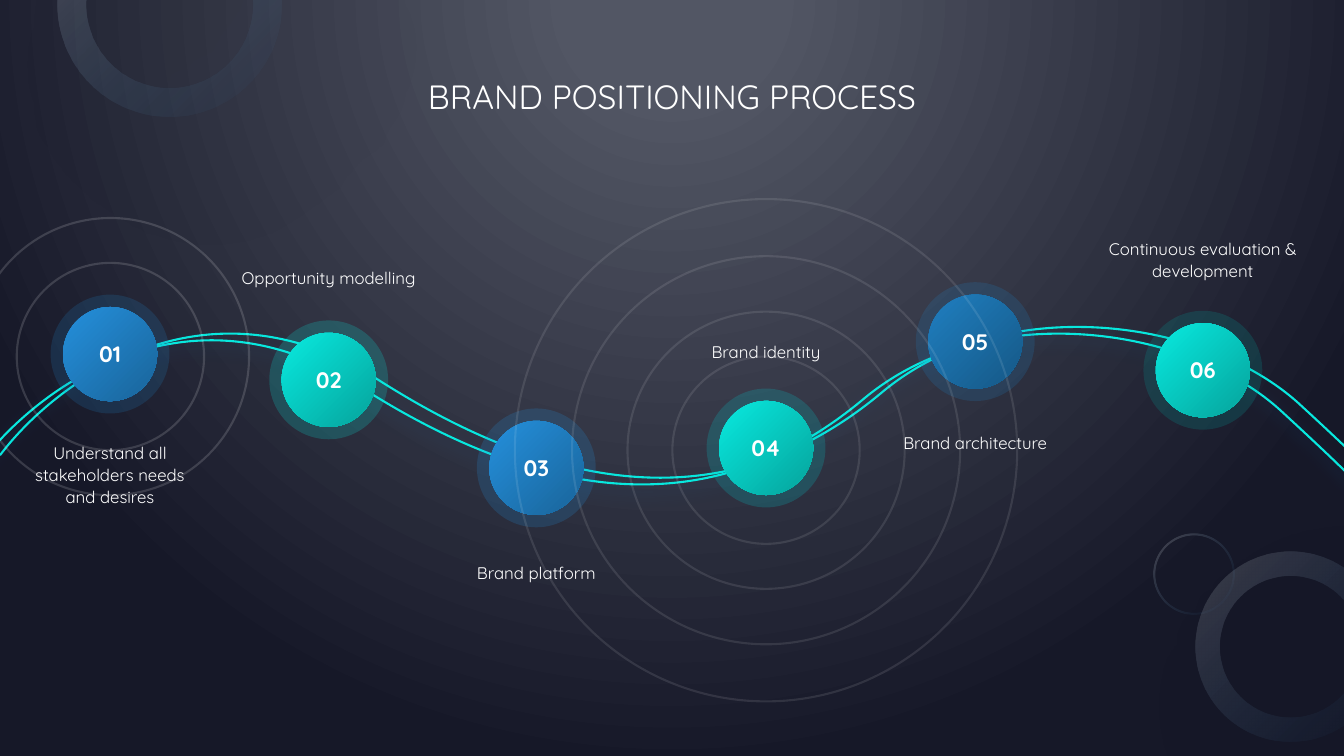
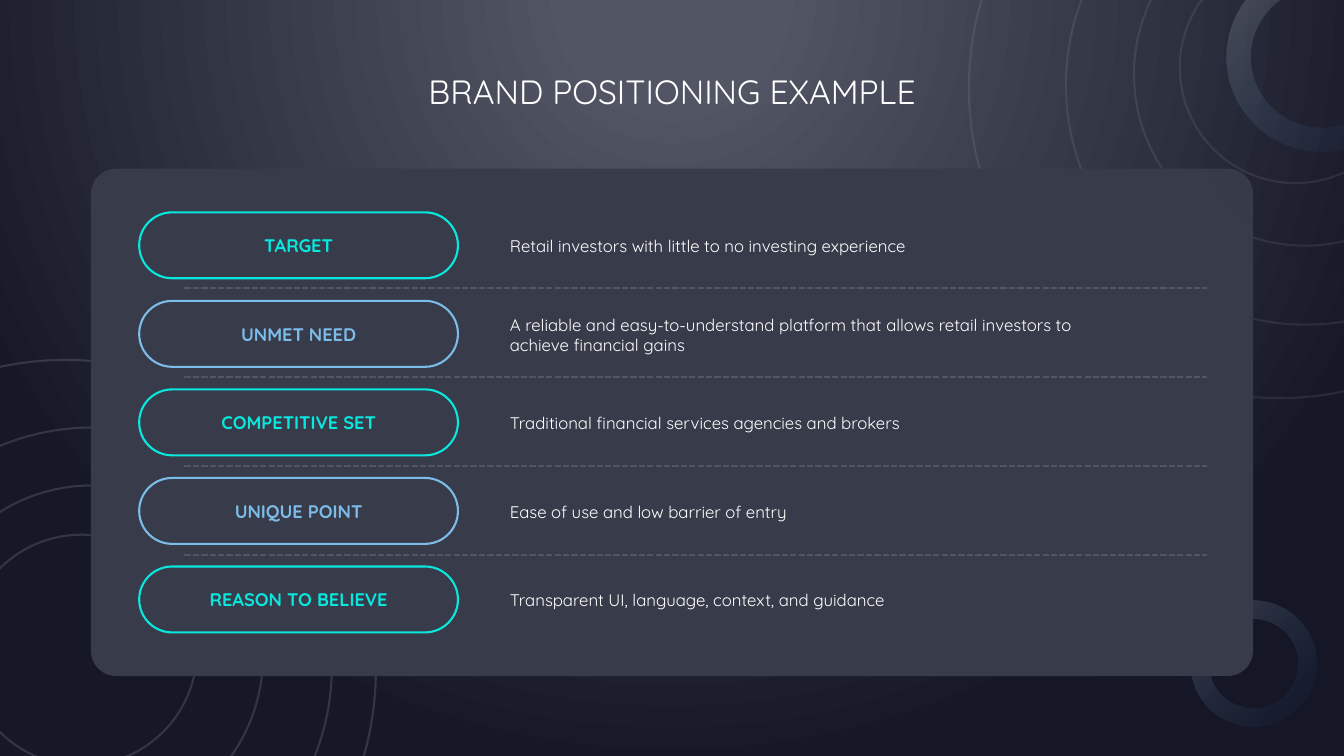
import typing
from dataclasses import dataclass

import pptx
import pptx.dml.color
import pptx.enum.dml
import pptx.enum.shapes
import pptx.enum.text
import pptx.oxml
import pptx.oxml.ns
import pptx.util

SHAPES = pptx.enum.shapes.MSO_SHAPE
ALIGN = pptx.enum.text.PP_ALIGN
ANCHOR = pptx.enum.text.MSO_ANCHOR
qn = pptx.oxml.ns.qn

# The slide is a grid of square cells
COLUMNS, ROWS = 160, 90
CELL = pptx.util.Inches(7.5) // ROWS

FONT = "Quicksand"
WHITE, TEAL, BLUE, SKY = "FFFFFF", "08E8DE", "248FDB", "7CBCE9"
DEEP_BLUE, PANEL, GREY, NAVY = "1F7EBF", "383B4A", "525664", "161828"
TEAL_DISC, BLUE_DISC = (TEAL, "06AEA6"), (BLUE, "1B6BA4")
LINE_WIDTH = pptx.util.Pt(1.5)
HALO, DISC = 14.15, 11.2


class Stop(typing.NamedTuple):
    position: int
    colour: str
    alpha: int = 100


class Shadow(typing.NamedTuple):
    colour: str
    alpha: int
    blur: int
    distance: int
    angle: int


RING_SHADOW = Shadow("3553D3", 5, 52, 4, 90)
DONUT_SHADOW = Shadow("000000", 40, 100, 65, 45)
WAVE_SHADOW = Shadow(BLUE, 25, 11, 4, 90)


@dataclass
class Step:
    number: str
    caption: str
    x: float
    y: float
    caption_top: float
    caption_width: float
    halo: str
    disc: tuple[str, str]


@dataclass
class Circle:
    x: float
    y: float
    size: float
    alpha: int
    hole: float = 0


class Statement(typing.NamedTuple):
    label: str
    detail: str


STEPS = [
    Step("01", "Understand all stakeholders needs and desires", 13.1, 42.15, 52.5, 20, DEEP_BLUE, BLUE_DISC),
    Step("02", "Opportunity modelling", 39.13, 45.22, 31.7, 22, TEAL, TEAL_DISC),
    Step("03", "Brand platform", 63.85, 55.7, 66.8, 20, BLUE, BLUE_DISC),
    Step("04", "Brand identity", 91.2, 53.33, 40.5, 20, "00CED1", TEAL_DISC),
    Step("05", "Brand architecture", 116.1, 40.67, 51.3, 20, DEEP_BLUE, (DEEP_BLUE, "175E8F")),
    Step("06", "Continuous evaluation & development", 143.2, 44.07, 28.2, 23.8, "00A29C", TEAL_DISC),
]
STATEMENTS = [
    Statement("TARGET", "Retail investors with little to no investing experience"),
    Statement("UNMET NEED", "A reliable and easy-to-understand platform that allows "
              "retail investors to achieve financial gains"),
    Statement("COMPETITIVE SET", "Traditional financial services agencies and brokers"),
    Statement("UNIQUE POINT", "Ease of use and low barrier of entry"),
    Statement("REASON TO BELIEVE", "Transparent UI, language, context, and guidance"),
]
PROCESS_RINGS = [Circle(91.2, 53.6, size, 9) for size in (59.8, 46.2, 33, 22.3)]
PROCESS_RINGS += [Circle(13.15, 42.45, size, 14) for size in (33, 22.3)]
RIPPLE = [(0, 0, 73.9), (3.15, -0.35, 57.1), (3.1, -1.6, 40.8), (1.9, -2.4, 27.5)]
EXAMPLE_RINGS = [
    Circle(x + shift_x, y + shift_y, size, alpha)
    for x, y, alpha in ((152.3, 10.45, 8), (7.8, 79.8, 13))
    for shift_x, shift_y, size in RIPPLE
]
PROCESS_DONUTS = [
    Circle(142.15, 68.35, 9.7, 22, 0.03),
    Circle(153.6, 76.95, 22.6, 19, 0.13),
    Circle(20.2, 0.55, 26.6, 22, 0.13),
]
LOWER_DONUT = Circle(149.2, 79, 15, 20, 0.15)
UPPER_DONUT = Circle(157.3, 6.8, 22.6, 20, 0.13)

# Start, then two control points and an end for each curve
WAVE = [
    (0, 54.2), (6.4, 45.7), (24.2, 32), (45, 45.2),
    (71, 61.8), (90, 59.2), (104.9, 46.8),
    (119.6, 34.4), (143.8, 38), (154.8, 48.2),
    (163.7, 56.4), (165, 58), (164.5, 57.7),
]
WAVE_TOP, WAVE_WIDTH, WAVE_HEIGHT = 39, 164.5, 18.7


def cells(*values: float) -> list[int]:
    return [round(value * CELL) for value in values]


def apply(target: typing.Any, formats: dict[str, typing.Any]) -> None:
    for name, value in formats.items():
        setattr(target, name, value)


def paint(fill: typing.Any, colour: str) -> None:
    fill.solid()
    fill.fore_color.rgb = pptx.dml.color.RGBColor.from_string(colour)


def fade(shape: typing.Any, route: str, alpha: int) -> None:
    """Set the opacity, in percent, of the solid fill under the given element."""
    tags = [qn(tag) for tag in (route + "a:solidFill a:srgbClr").split()]
    colour = shape.element.spPr.find("/".join(tags))
    colour.append(colour.makeelement(qn("a:alpha"), {"val": str(alpha * 1000)}))


def blend(parent: typing.Any, stops: list[Stop], direction: str) -> None:
    """Turn the solid fill of a properties element into a gradient."""
    marks = "".join(
        f'<a:gs pos="{stop.position * 1000}"><a:srgbClr val="{stop.colour}">'
        f'<a:alpha val="{stop.alpha * 1000}"/></a:srgbClr></a:gs>' for stop in stops)
    gradient = pptx.oxml.parse_xml(
        f'<a:gradFill {pptx.oxml.ns.nsdecls("a")} rotWithShape="1">'
        f"<a:gsLst>{marks}</a:gsLst>{direction}</a:gradFill>")
    parent.replace(parent.find(qn("a:solidFill")), gradient)


DIAGONAL = '<a:lin ang="2700000" scaled="0"/>'
GLOW = '<a:path path="circle"><a:fillToRect l="50000" t="-80000" r="50000" b="180000"/></a:path>'


def cast(shape: typing.Any, shadow: Shadow) -> None:
    shape.shadow.inherit = False
    shape.element.spPr.find(qn("a:effectLst")).append(pptx.oxml.parse_xml(
        f'<a:outerShdw {pptx.oxml.ns.nsdecls("a")} blurRad="{pptx.util.Pt(shadow.blur)}" '
        f'dist="{pptx.util.Pt(shadow.distance)}" dir="{shadow.angle * 60000}" rotWithShape="0">'
        f'<a:srgbClr val="{shadow.colour}"><a:alpha val="{shadow.alpha * 1000}"/>'
        "</a:srgbClr></a:outerShdw>"))


def write(box: typing.Any, text: str, size: float, colour: str = WHITE, bold: bool = False,
          align: typing.Any = ALIGN.CENTER, anchor: typing.Any = ANCHOR.MIDDLE,
          leading: float | None = None) -> None:
    frame = box.text_frame
    apply(frame, {"word_wrap": True, "auto_size": pptx.enum.text.MSO_AUTO_SIZE.NONE,
                  "vertical_anchor": anchor, "margin_left": 0, "margin_right": 0,
                  "margin_top": 0, "margin_bottom": 0})
    para = frame.paragraphs[0]
    apply(para, {"alignment": align, "line_spacing": pptx.util.Pt(leading) if leading else None})
    span = para.add_run()
    span.text = text
    apply(span.font, {"name": FONT, "size": pptx.util.Pt(size), "bold": bold})
    paint(span.font.fill, colour)


def add_shape(page: typing.Any, kind: typing.Any, left: float, top: float, width: float,
              height: float, fill: str | None = None, line: str | None = None) -> typing.Any:
    shape = page.shapes.add_shape(kind, *cells(left, top, width, height))
    shape.shadow.inherit = False
    for target, colour in ((shape.fill, fill), (shape.line.fill, line)):
        if colour:
            paint(target, colour)
        else:
            target.background()
    if line:
        shape.line.width = LINE_WIDTH
    return shape


def add_round(page: typing.Any, kind: typing.Any, x: float, y: float, size: float,
              **colours: str) -> typing.Any:
    """Add a shape as wide as it is high, centred on x and y."""
    return add_shape(page, kind, x - size / 2, y - size / 2, size, size, **colours)


def add_ring(page: typing.Any, ring: Circle) -> None:
    shape = add_round(page, SHAPES.OVAL, ring.x, ring.y, ring.size, line=WHITE)
    fade(shape, "a:ln ", ring.alpha)
    cast(shape, RING_SHADOW)


def add_donut(page: typing.Any, donut: Circle) -> None:
    shape = add_round(page, SHAPES.DONUT, donut.x, donut.y, donut.size, fill=BLUE)
    shape.adjustments[0] = donut.hole
    blend(shape.element.spPr, [Stop(2, "E5DEDB", donut.alpha), Stop(100, BLUE, 0)], DIAGONAL)
    cast(shape, DONUT_SHADOW)


def bend(outline: typing.Any) -> None:
    """Join each three straight segments of an outline into one Bézier curve."""
    segments = outline.findall(qn("a:lnTo"))
    for first in range(0, len(segments), 3):
        curve = outline.makeelement(qn("a:cubicBezTo"), {})
        segments[first].addprevious(curve)
        for segment in segments[first:first + 3]:
            curve.append(segment[0])
            outline.remove(segment)


def add_wave(page: typing.Any, shift_x: float = 0, shift_y: float = 0) -> typing.Any:
    start, *rest = [tuple(cells(x + shift_x, y + shift_y)) for x, y in WAVE]
    builder = page.shapes.build_freeform(*start)
    builder.add_line_segments(rest, close=False)
    wave = builder.convert_to_shape()
    outline = wave.element.spPr.find(".//" + qn("a:pathLst"))[0]
    bend(outline)
    # Control points reach beyond the curve, so the frame is fitted to the curve itself
    top, width, height = cells(WAVE_TOP + shift_y, WAVE_WIDTH, WAVE_HEIGHT)
    for point in outline.iter(qn("a:pt")):
        point.set("y", str(int(point.get("y")) + wave.top - top))
    outline.set("w", str(width))
    outline.set("h", str(height))
    apply(wave, {"top": top, "width": width, "height": height})
    wave.shadow.inherit = False
    wave.fill.background()
    paint(wave.line.fill, TEAL)
    wave.line.width = LINE_WIDTH
    return wave


def add_step(page: typing.Any, step: Step) -> None:
    halo = add_round(page, SHAPES.OVAL, step.x, step.y, HALO, fill=step.halo)
    fade(halo, "", 20)
    disc = add_round(page, SHAPES.OVAL, step.x, step.y, DISC, fill=step.disc[0])
    blend(disc.element.spPr, [Stop(2, step.disc[0]), Stop(85, step.disc[1])], DIAGONAL)
    write(disc, step.number, 16, bold=True, leading=18.8)
    box = page.shapes.add_textbox(
        *cells(step.x - step.caption_width / 2, step.caption_top, step.caption_width, 7.8))
    write(box, step.caption, 12, anchor=ANCHOR.TOP, leading=15.6)


def add_page(deck: typing.Any, title: str, middle: float) -> typing.Any:
    page = deck.slides.add_slide(deck.slide_layouts[5])
    box = page.shapes.title
    left, top, width, height = cells(34, middle - 3, COLUMNS - 68, 6)
    apply(box, {"left": left, "top": top, "width": width, "height": height})
    write(box, title, 24)
    return page


def build_process(deck: typing.Any) -> None:
    page = add_page(deck, "BRAND POSITIONING PROCESS", 11.4)
    add_wave(page)
    cast(add_wave(page, -2.2, 0.8), WAVE_SHADOW)
    for step in STEPS:
        add_step(page, step)
    for ring in PROCESS_RINGS:
        add_ring(page, ring)
    for donut in PROCESS_DONUTS:
        add_donut(page, donut)


def build_example(deck: typing.Any) -> None:
    page = add_page(deck, "BRAND POSITIONING EXAMPLE", 10.85)
    add_donut(page, LOWER_DONUT)
    for ring in EXAMPLE_RINGS:
        add_ring(page, ring)
    panel = add_shape(page, SHAPES.ROUNDED_RECTANGLE, 10.83, 20.08, 138.35, 60.4, fill=PANEL)
    panel.adjustments[0] = 0.05
    pitch, pill_height = 10.54, 7.85
    for row, statement in enumerate(STATEMENTS):
        top = 25.28 + row * pitch
        colour = SKY if row % 2 else TEAL
        pill = add_shape(page, SHAPES.ROUNDED_RECTANGLE, 16.57, top, 37.95, pill_height,
                         fill=PANEL, line=colour)
        pill.adjustments[0] = 0.5
        write(pill, statement.label, 13, colour, bold=True)
        detail = page.shapes.add_textbox(*cells(60.7, top + 0.08, 69.2, pill_height))
        write(detail, statement.detail, 12, align=ALIGN.LEFT)
        if row:
            y = 23.75 + row * 10.58
            rule = page.shapes.add_connector(
                pptx.enum.shapes.MSO_CONNECTOR.STRAIGHT, *cells(21.95, y, 143.75, y))
            paint(rule.line.fill, GREY)
            apply(rule.line, {"width": LINE_WIDTH,
                              "dash_style": pptx.enum.dml.MSO_LINE.SQUARE_DOT})
            properties = rule.element.spPr
            properties.append(properties.makeelement(qn("a:effectLst"), {}))
    add_donut(page, UPPER_DONUT)


def main() -> None:
    deck = pptx.Presentation()
    apply(deck, {"slide_width": COLUMNS * CELL, "slide_height": ROWS * CELL})
    layout = deck.slide_layouts[5]
    paint(layout.background.fill, NAVY)
    blend(layout.element.find(".//" + qn("p:bgPr")), [Stop(13, GREY), Stop(100, NAVY)], GLOW)
    build_process(deck)
    build_example(deck)
    deck.save("out.pptx")


if __name__ == "__main__":
    main()
